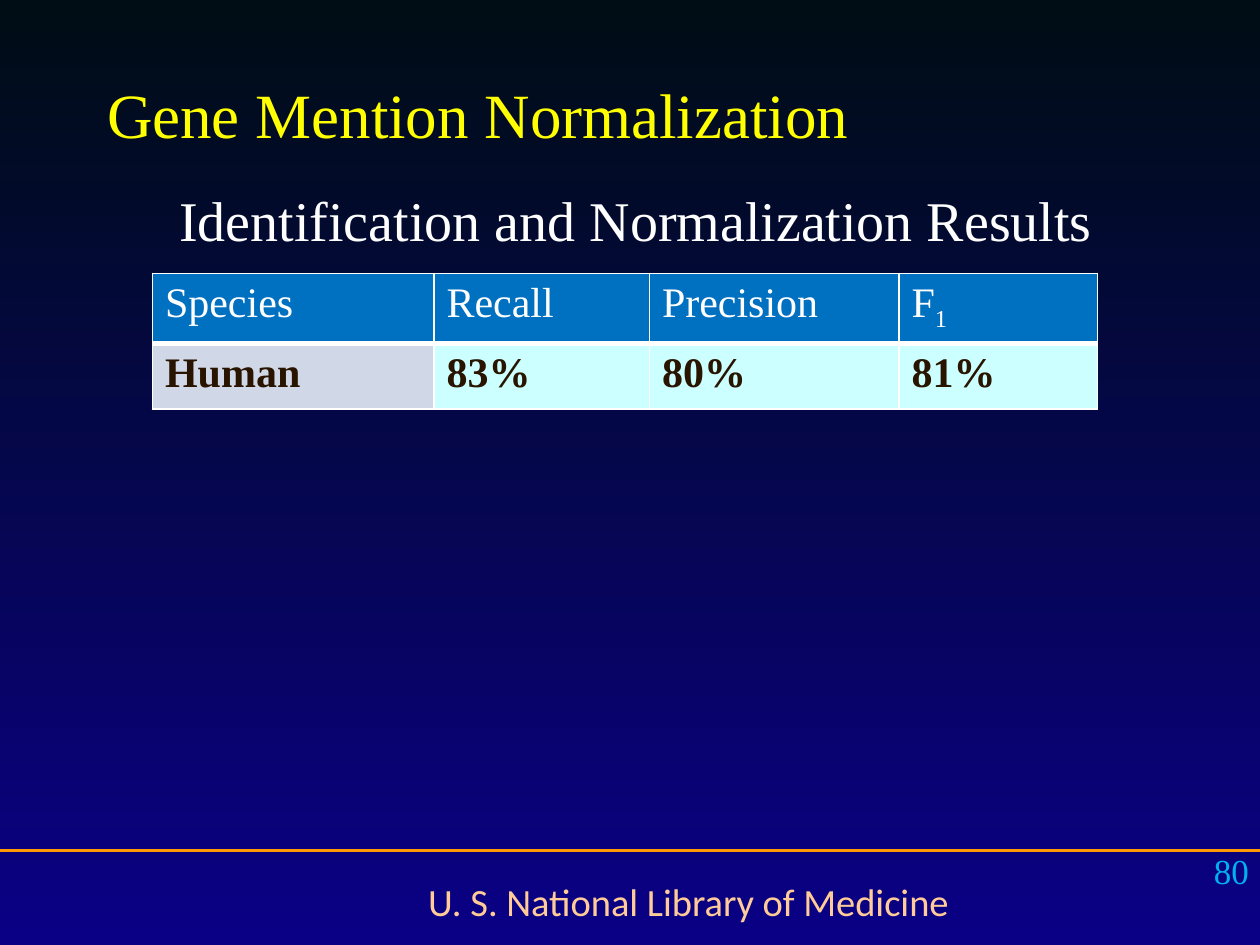
from lxml import etree
from pptx import Presentation, util as u
from pptx.dml.color import RGBColor
from pptx.enum import shapes, text
from pptx.oxml.ns import qn

SERIF = "Times New Roman"
WHITE = "FFFFFF"
HEADERS = ["Species", "Recall", "Precision", "F"]
RESULTS = ["Human", "83%", "80%", "81%"]
COLUMN_SHARES = [0.298, 0.228, 0.264, 0.21]


def colour(value):
    return RGBColor.from_string(value)


def inches(*lengths):
    return [u.Inches(length) for length in lengths]


def write(frame, wording, size, shade, align=text.PP_ALIGN.LEFT, name=SERIF, bold=False):
    frame.word_wrap = True
    para = frame.paragraphs[0]
    para.alignment = align
    span = para.add_run()
    span.text = wording
    for key, value in {"name": name, "size": u.Pt(size), "bold": bold}.items():
        setattr(span.font, key, value)
    span.font.color.rgb = colour(shade)
    return para


def add_label(page, area, *wording, **styles):
    box = page.shapes.add_textbox(*inches(*area))
    write(box.text_frame, *wording, **styles)


def paint_background(page):
    fill = page.background.fill
    fill.gradient()
    fill.gradient_angle = 270
    for stop, shade in zip(fill.gradient_stops, ["000D14", "0A0086"]):
        stop.color.rgb = colour(shade)


def add_footer(page, area):
    left, top, width, height = area
    rule = page.shapes.add_connector(
        shapes.MSO_CONNECTOR.STRAIGHT, *inches(left, top, left + width, top))
    rule.line.color.rgb = colour("FF9900")
    rule.line.width = u.Pt(1.5)
    etree.SubElement(rule._element.spPr, qn("a:effectLst"))
    add_label(page, (left + 0.233 * width, top + 0.17, 0.627 * width, 0.47),
              "U. S. National Library of Medicine", 22, "FFCC99",
              align=text.PP_ALIGN.CENTER, name="Calibri")
    add_label(page, (left + 0.768 * width, top - 0.06, 0.233 * width, 0.52),
              "80", 20, "00B0F0", align=text.PP_ALIGN.RIGHT)


def add_heading(page, area):
    title = page.shapes.title
    for key, value in zip(["left", "top", "width", "height"], inches(*area)):
        setattr(title, key, value)
    title.text_frame.vertical_anchor = text.MSO_ANCHOR.BOTTOM
    write(title.text_frame, "Gene Mention Normalization", 36, "FFFF00")


def border_cell(cell, widths):
    properties = cell._tc.get_or_add_tcPr()
    for side, width in widths.items():
        edge = etree.SubElement(properties, qn(f"a:ln{side}"), w=str(u.Pt(width)))
        fill = etree.SubElement(edge, qn("a:solidFill"))
        etree.SubElement(fill, qn("a:srgbClr"), val=WHITE)


def fill_row(cells, wording, fills, shade, bold, widths):
    for cell, word, fill in zip(cells, wording, fills):
        border_cell(cell, widths)
        cell.fill.solid()
        cell.fill.fore_color.rgb = colour(fill)
        write(cell.text_frame, word, 24, shade, bold=bold)


def add_results(page, area):
    table = page.shapes.add_table(2, len(HEADERS), *inches(*area)).table
    for column, share in zip(table.columns, COLUMN_SHARES):
        column.width = u.Inches(area[2] * share)
    header, body = [list(row.cells) for row in table.rows]
    fill_row(header, HEADERS, ["0070C0"] * 4, WHITE, False,
             {"L": 1, "R": 1, "T": 1, "B": 3})
    fill_row(body, RESULTS, ["D0D8E8"] + ["CCFFFF"] * 3, "291400", True,
             {"L": 1, "R": 1, "T": 3, "B": 1})
    index = write(header[-1].text_frame, "1", 24, WHITE).runs[-1]
    index._r.get_or_add_rPr().set("baseline", "-25000")


def main():
    deck = Presentation()
    deck.slide_width, deck.slide_height = inches(10, 7.5)
    page = deck.slides.add_slide(deck.slide_layouts.get_by_name("Title Only"))
    paint_background(page)
    add_footer(page, (0, 6.75, 10, 0.75))
    add_heading(page, (0.75, 0.5, 8.5, 0.75))
    add_results(page, (1.21, 2.17, 7.5, 1.04))
    add_label(page, (0.6, 1.42, 8.9, 0.64), "Identification and Normalization Results",
              32, WHITE, align=text.PP_ALIGN.CENTER)
    deck.save("out.pptx")


if __name__ == "__main__":
    main()
